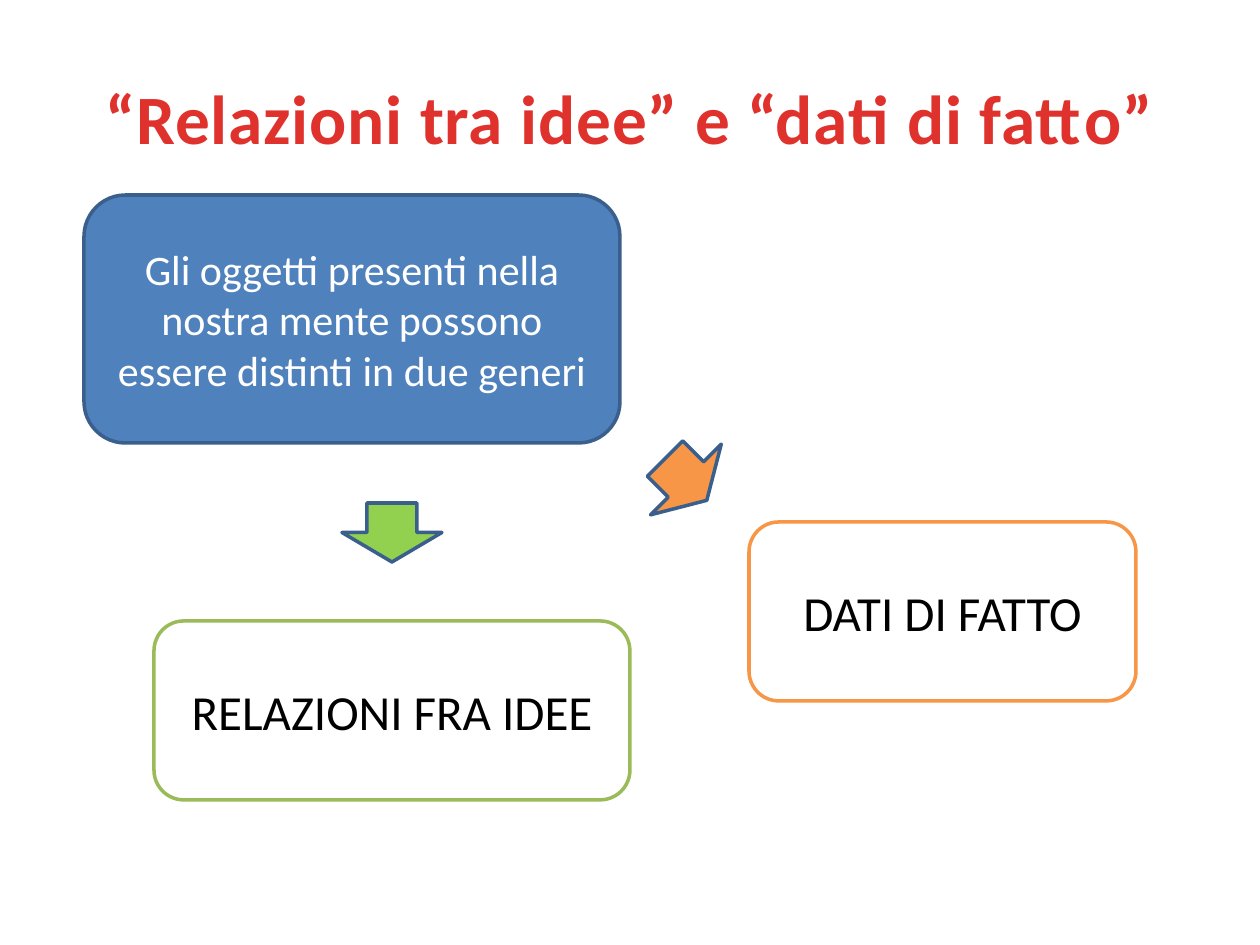
from pptx import Presentation
from pptx.dml.color import RGBColor
from pptx.enum.shapes import MSO_SHAPE
from pptx.enum.text import MSO_ANCHOR, PP_ALIGN
from pptx.util import Emu, Pt

ROUNDED = MSO_SHAPE.ROUNDED_RECTANGLE
DOWN_ARROW = MSO_SHAPE.DOWN_ARROW
MIDDLE = MSO_ANCHOR.MIDDLE
CENTER = PP_ALIGN.CENTER

EMU_PER_PX = 914400 // 126
FONT = "Calibri"
COLORS = {
    "title": "E0322D",
    "blue": "4F81BD",
    "outline": "3A5F8C",
    "lime": "92D050",
    "green": "9BBB59",
    "orange": "F79646",
    "white": "FFFFFF",
    "black": "000000",
}


class SlideBuilder:
    """Draws styled elements on the current slide, measured in px."""

    def __init__(self, slide):
        self.slide = slide

    def color(self, name):
        return RGBColor.from_string(COLORS[name])

    def place(self, *lengths):
        return [Emu(length * EMU_PER_PX) for length in lengths]

    def label(self, box, text, size, color):
        frame = box.text_frame
        frame.word_wrap = True
        frame.vertical_anchor = MIDDLE
        frame.text = text
        para = frame.paragraphs[0]
        para.alignment = CENTER
        span = para.runs[0]
        span.font.name = FONT
        span.font.size = Pt(size)
        span.font.color.rgb = self.color(color)
        return span

    def title(self, text, at):
        box = self.slide.shapes.add_textbox(*self.place(*at))
        span = self.label(box, text, 39.6, "title")
        span.font.bold = True
        span._r.get_or_add_rPr().set("spc", "50")

    def shape(self, kind, at, fill, line):
        shape = self.slide.shapes.add_shape(kind, *self.place(*at))
        shape.shadow.inherit = False
        shape.fill.solid()
        shape.fill.fore_color.rgb = self.color(fill)
        shape.line.color.rgb = self.color(line)
        shape.line.width = Pt(2)
        return shape

    def card(self, text, at, size, fill, line, color):
        self.label(self.shape(ROUNDED, at, fill, line), text, size, color)

    def arrow(self, left, top, fill, rotation=0):
        arrow = self.shape(DOWN_ARROW, (left, top, 100, 59), fill, "outline")
        arrow.rotation = rotation


def main():
    deck = Presentation()
    deck.slide_width, deck.slide_height = Emu(1260 * EMU_PER_PX), Emu(945 * EMU_PER_PX)
    page = SlideBuilder(deck.slides.add_slide(deck.slide_layouts[6]))

    page.title("“Relazioni tra idee” e “dati di fatto”", (63, 38, 1134, 158))
    page.card(
        "Gli oggetti presenti nella nostra mente possono essere distinti in due generi",
        (84, 195, 536, 248), 24, "blue", "outline", "white",
    )
    page.arrow(342, 503, "lime")
    page.card("RELAZIONI FRA IDEE", (154, 621, 476, 179), 28, "white", "green", "black")
    page.card("DATI DI FATTO", (749, 522, 387, 179), 28, "white", "orange", "black")
    page.arrow(636, 450, "orange", 315)

    deck.save("out.pptx")


if __name__ == "__main__":
    main()
